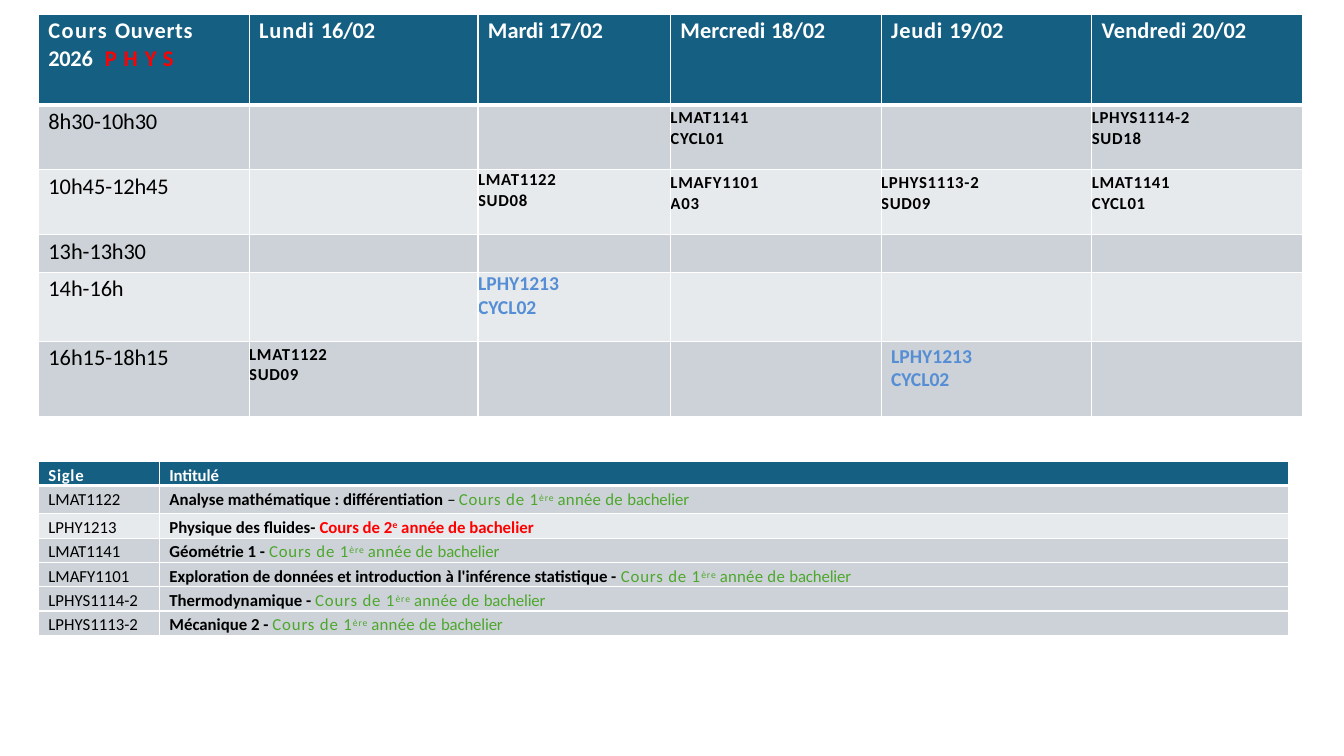
import copy
import pptx
import pptx.util
import pptx.dml.color
import pptx.oxml
import pptx.oxml.ns

Cm = pptx.util.Cm
BLUE, GREY, PALE = "155F82", "CCD2D7", "E7EAEC"
WHITE, BLACK, RED, GREEN, SKY = "FFFFFF", "000000", "FF0000", "4EA72D", "558ED5"


def tint(code):
    return pptx.dml.color.RGBColor.from_string(code)


def run(text, size=12, color=BLACK, bold=False, space=0, base=0):
    return text, size, color, bold, space, base


class Page:
    font = "Calibri"

    def __init__(self, deck):
        self.slide = deck.slides.add_slide(deck.slide_layouts[6])

    def table(self, left, top, cols, rows, fills):
        frame = self.slide.shapes.add_table(
            len(rows), len(cols), Cm(left), Cm(top), Cm(sum(cols)), Cm(sum(rows)))
        grid = frame.table
        grid.first_row = grid.horz_banding = False
        for col, width in zip(grid.columns, cols):
            col.width = Cm(width)
        for row, height in zip(grid.rows, rows):
            row.height = Cm(height)
        for r, fill in enumerate(fills):
            for cell in grid.rows[r].cells:
                self.box(cell, r, fill)
        return grid

    def box(self, cell, row, fill):
        cell.margin_left = cell.margin_right = cell.margin_top = cell.margin_bottom = 0
        props = cell._tc.get_or_add_tcPr()
        thick = {"T": 3 if row == 1 else 1, "B": 3 if row == 0 else 1}
        for side in "LRTB":
            width = pptx.util.Pt(thick.get(side, 1))
            props.append(pptx.oxml.parse_xml(
                f'<a:ln{side} {pptx.oxml.ns.nsdecls("a")} w="{width}"><a:solidFill>'
                f'<a:srgbClr val="{WHITE}"/></a:solidFill></a:ln{side}>'))
        cell.fill.solid()
        cell.fill.fore_color.rgb = tint(fill)

    def text(self, cell, runs, top=0.08, dent=0.25):
        cell.margin_top = Cm(top)
        para = cell.text_frame.paragraphs[0]
        props = para._p.get_or_add_pPr()
        props.set("marL", str(Cm(dent)))
        props.set("indent", "0")
        for words, *style in runs:
            for i, line in enumerate(words.split("\n")):
                if i:
                    para.add_line_break()
                    para._p[-1].append(copy.deepcopy(part._r.rPr))
                part = para.add_run()
                part.text = line
                self.style(part, *style)

    def style(self, part, size, color, bold, space, base):
        part.font.name = self.font
        part.font.size = pptx.util.Pt(size)
        part.font.bold = bold
        part.font.color.rgb = tint(color)
        props = part._r.get_or_add_rPr()
        if space:
            props.set("spc", str(round(space * 100)))
        if base:
            props.set("baseline", str(base * 1000))


DAYS = [("Lundi ", 0.7, "16/02"), ("Mardi ", 0, "17/02"), ("Mercredi ", 0.1, "18/02"),
        ("Jeudi ", 0.6, "19/02"), ("Vendredi ", 0.1, "20/02")]
HOURS = [("8h30-", "10h30"), ("10h45-", "12h45"), ("13h-", "13h30"),
         ("14h-", "16h"), ("16h15-", "18h15")]
SLOTS = [(1, 3, "LMAT1141\nCYCL01"), (1, 5, "LPHYS1114-2\nSUD18"),
         (2, 2, "LMAT1122\nSUD08"), (2, 3, "LMAFY1101\nA03"),
         (2, 4, "LPHYS1113-2\nSUD09"), (2, 5, "LMAT1141\nCYCL01"),
         (4, 2, "LPHY1213\nCYCL02"), (5, 1, "LMAT1122\nSUD09"),
         (5, 4, "LPHY1213\nCYCL02")]
FIRST = [run("Cours ", color=GREEN, space=0.6), run("de 1", color=GREEN, space=0.6),
         run("ère ", color=GREEN, space=0.6, base=24),
         run("année de ", color=GREEN, space=0.2),
         run("bachelier", color=GREEN, space=-0.1)]
SECOND = [run("Cours de 2", color=RED, bold=True), run("e", color=RED, bold=True, base=30),
          run(" année de bachelier", color=RED, bold=True)]
DASH = [run("– ", space=-0.6)]
TITLES = [("LMAT1122", "Analyse mathématique : différentiation ", DASH + FIRST),
          ("LPHY1213", "Physique des fluides- ", SECOND),
          ("LMAT1141", "Géométrie 1 - ", FIRST),
          ("LMAFY1101", "Exploration de données et introduction à l'inférence statistique - ",
           FIRST),
          ("LPHYS1114-2", "Thermodynamique - ", FIRST),
          ("LPHYS1113-2", "Mécanique 2 - ", FIRST)]


def plan(page):
    grid = page.table(0.97, 0.36, [5.31, 5.77, 4.85, 5.31, 5.31, 5.31],
                      [2.28, 1.64, 1.64, 0.94, 1.74, 1.9],
                      [BLUE, GREY, PALE, GREY, PALE, GREY])
    head = grid.cell(0, 0)
    head.margin_right = Cm(0.8)
    page.text(head, [run("Cours ", 16, WHITE, True, 1.1), run("Ouverts ", 16, WHITE, True, 0.5),
                     run("2026", 16, WHITE, True, -0.2), run(" PHYS", 16, RED, True, 5)])
    for c, (day, space, date) in enumerate(DAYS, 1):
        page.text(grid.cell(0, c), [run(day, 16, WHITE, True, space),
                                    run(date, 16, WHITE, True, -0.1)])
    for r, (start, end) in enumerate(HOURS, 1):
        page.text(grid.cell(r, 0), [run(start, 16), run(end, 16, space=-0.1)])
    for r, c, words in SLOTS:
        fluid = words.startswith("LPHY1213")
        part = run(words, 14, SKY, True) if fluid else run(words, 12, BLACK, True, 0.5)
        page.text(grid.cell(r, c), [part], 0 if c == 2 else 0.08,
                  0.25 if fluid and c == 4 else 0)


def key(page):
    grid = page.table(0.97, 11.63, [3.05, 28.45], [0.58, 0.71, 0.62] + [0.61] * 4,
                      [BLUE, GREY, PALE] + [GREY] * 4)
    page.text(grid.cell(0, 0), [run("Sigle", 12, WHITE, True, 0.5)], 0.09)
    page.text(grid.cell(0, 1), [run("Intitulé", 12, WHITE, True, -0.1)], 0.09)
    for r, (code, name, year) in enumerate(TITLES, 1):
        page.text(grid.cell(r, 0), [run(code)], 0.09)
        page.text(grid.cell(r, 1), [run(name, bold=True)] + year, 0.09)


def main():
    deck = pptx.Presentation()
    deck.slide_width, deck.slide_height = Cm(33.87), Cm(19.05)
    page = Page(deck)
    plan(page)
    key(page)
    deck.save("out.pptx")


if __name__ == "__main__":
    main()
